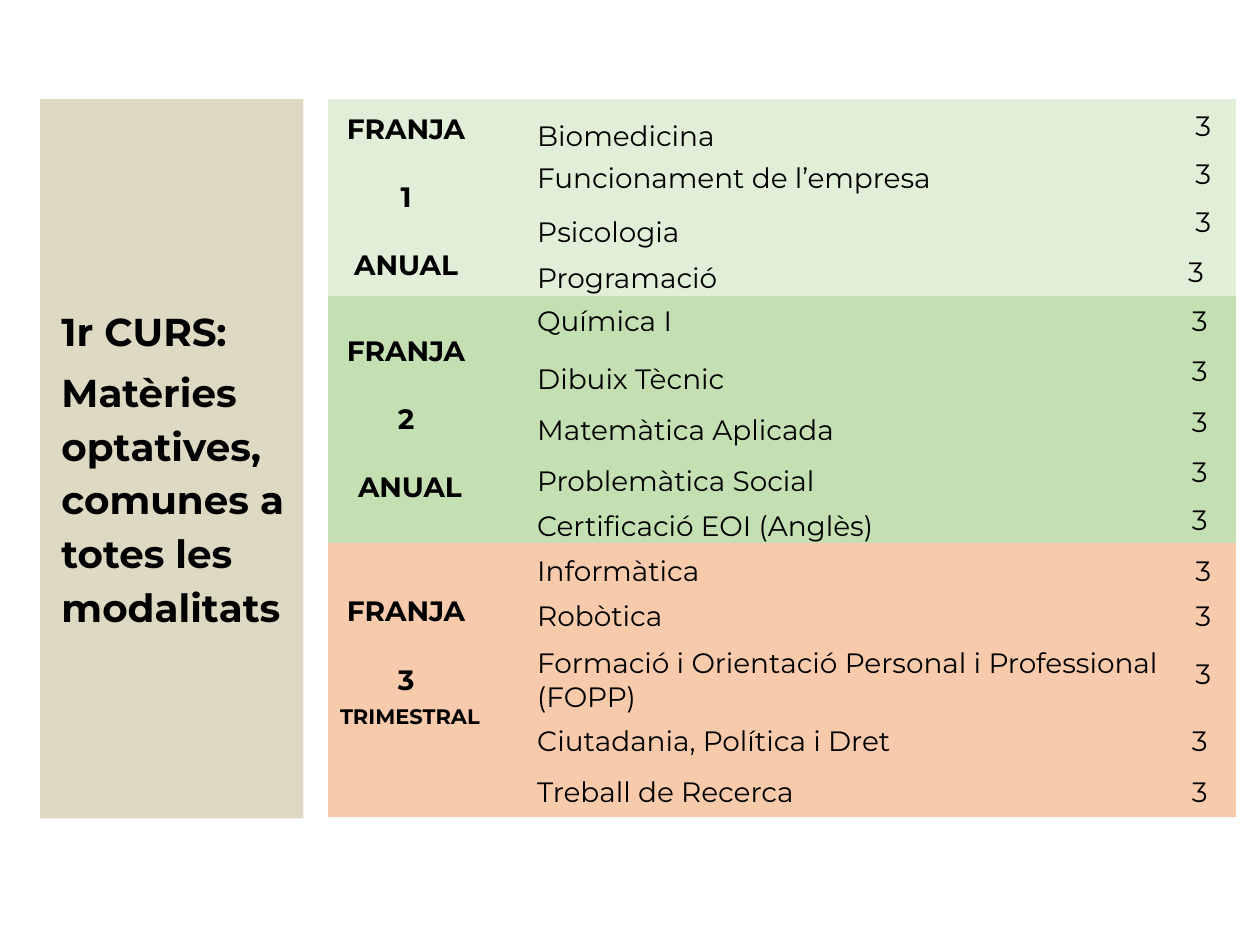
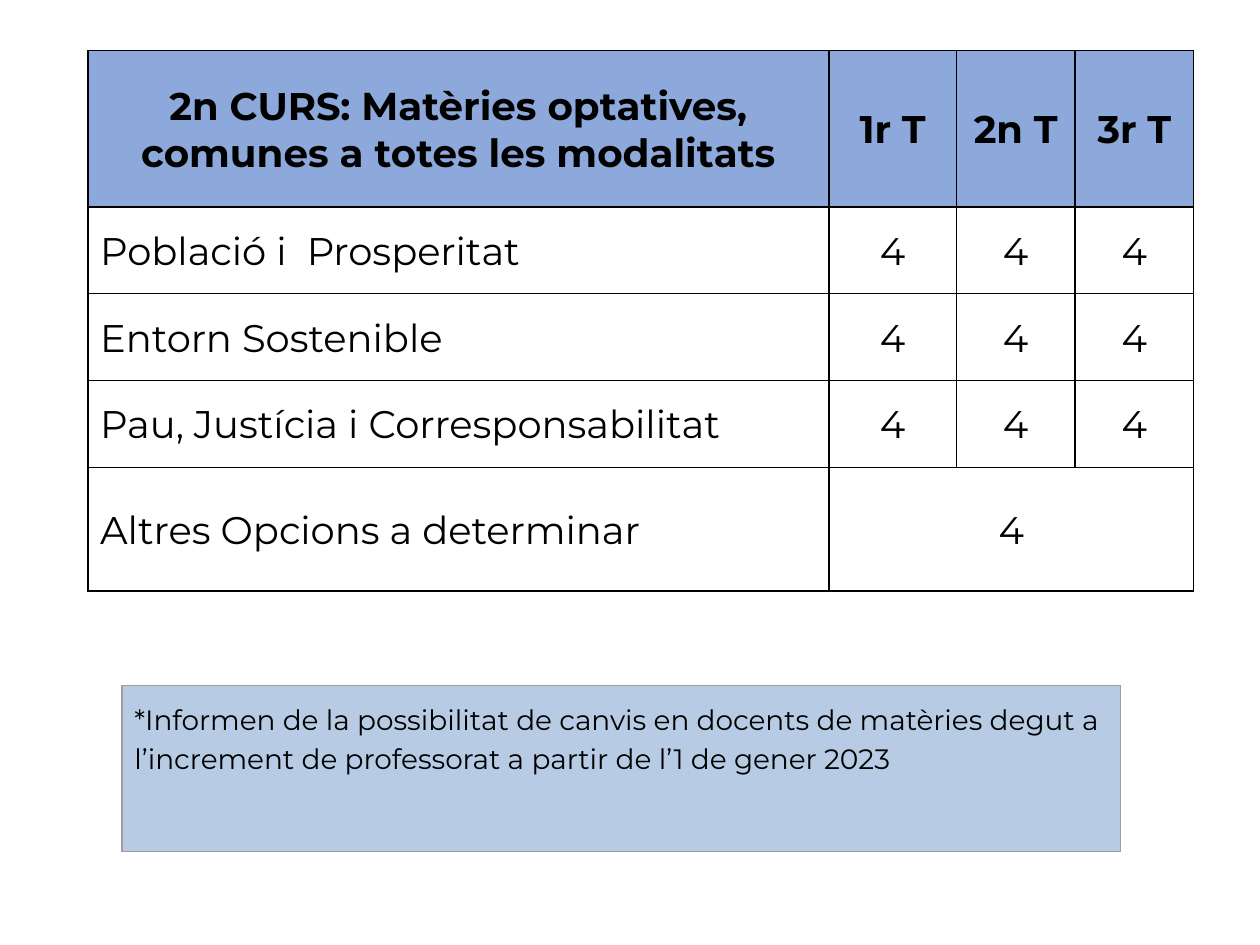
from lxml import etree
from pptx import Presentation
from pptx.dml.color import RGBColor
from pptx.enum.shapes import MSO_SHAPE
from pptx.enum.text import MSO_ANCHOR, PP_ALIGN
from pptx.oxml.ns import qn
from pptx.util import Cm, Pt

RECT = MSO_SHAPE.RECTANGLE
TOP, MID, LOW = MSO_ANCHOR.TOP, MSO_ANCHOR.MIDDLE, MSO_ANCHOR.BOTTOM
LEFT, CENTER = PP_ALIGN.LEFT, PP_ALIGN.CENTER

FONT = "Montserrat"
PLAIN = "{2D5ABB26-0587-4C30-8999-92F81FD0307C}"
BLACK = RGBColor(0x00, 0x00, 0x00)
GRAY = RGBColor(0x9E, 0x9E, 0x9E)
SAND = RGBColor(0xDD, 0xD9, 0xC3)
MINT = RGBColor(0xE1, 0xEF, 0xD8)
GREEN = RGBColor(0xC4, 0xE0, 0xB2)
PEACH = RGBColor(0xF7, 0xCA, 0xAC)
BLUE = RGBColor(0x8D, 0xA9, 0xDB)
PALE = RGBColor(0xB7, 0xCC, 0xE4)

BANDS = [
    (MINT, ["FRANJA", "1", "ANUAL"], [
        (1.09, "Biomedicina", " 3", LOW),
        (0.84, "Funcionament de l’empresa", " 3", LOW),
        (1.09, "Psicologia", " 3", LOW),
        (0.94, "Programació", "3 ", LOW)]),
    (GREEN, ["FRANJA", "2", " ANUAL"], [
        (1.02, "Química I", "3", MID),
        (1.02, "Dibuix Tècnic", "3", LOW),
        (1.02, "Matemàtica Aplicada", "3", LOW),
        (1.02, "Problemàtica Social", "3", LOW),
        (0.91, "Certificació EOI (Anglès)", "3", LOW)]),
    (PEACH, ["FRANJA", "3"], [
        (1.14, "Informàtica", " 3", MID),
        (0.69, "Robòtica", " 3", LOW),
        (1.63, "Formació i Orientació Personal i Professional (FOPP)", " 3", LOW),
        (1.07, "Ciutadania, Política i Dret", "3", MID),
        (0.99, "Treball de Recerca", "3", MID)]),
]
TERMS = ["1r T", "2n T", "3r T"]
THEMES = ["Població i  Prosperitat", "Entorn Sostenible",
          "Pau, Justícia i Corresponsabilitat"]
OTHER = "Altres Opcions a determinar"
NOTE = ("*Informen de la possibilitat de canvis en docents de matèries degut a "
        "l’increment de professorat a partir de l’1 de gener 2023")


def write(para, text, size, bold=False):
    """Add one run to a paragraph."""
    run = para.add_run()
    run.text = text
    font = run.font
    font.name, font.size, font.bold = FONT, Pt(size), bold
    font.color.rgb = BLACK


def pad(item, left, top, right, low):
    """Set the inner margins of a cell or text frame, in cm."""
    item.margin_left, item.margin_top = Cm(left), Cm(top)
    item.margin_right, item.margin_bottom = Cm(right), Cm(low)


def grid(slide, box, cols, rows):
    """Add a plain table whose column and row shares fill the box."""
    x, y, w, h = box
    frame = slide.shapes.add_table(len(rows), len(cols),
                                   Cm(x), Cm(y), Cm(w), Cm(h))
    next(frame._element.iter(qn("a:tableStyleId"))).text = PLAIN
    table = frame.table
    table.first_row = table.horz_banding = False
    for col, part in zip(table.columns, cols):
        col.width = Cm(w * part / sum(cols))
    for row, part in zip(table.rows, rows):
        row.height = Cm(h * part / sum(rows))
    for cell in table.iter_cells():
        pad(cell, 0, 0, 0, 0)
    return table


def edge(cell, color, width):
    """Draw a line on all four sides of a cell."""
    props = cell._tc.get_or_add_tcPr()
    for side in ("lnL", "lnR", "lnT", "lnB"):
        line = etree.SubElement(props, qn("a:" + side), w=str(Pt(width)))
        fill = etree.SubElement(line, qn("a:solidFill"))
        etree.SubElement(fill, qn("a:srgbClr"), val=str(color))


def paint(cell, color, anchor=MID, align=LEFT):
    """Fill and align a cell, and return its first paragraph."""
    cell.fill.solid()
    cell.fill.fore_color.rgb = color
    cell.vertical_anchor = anchor
    para = cell.text_frame.paragraphs[0]
    para.alignment = align
    return para


def panel(slide, box):
    """Draw the side panel that names the first course."""
    shape = slide.shapes.add_shape(RECT, *map(Cm, box))
    shape.shadow.inherit = False
    shape.fill.solid()
    shape.fill.fore_color.rgb = SAND
    shape.line.fill.background()
    frame = shape.text_frame
    frame.word_wrap = True
    frame.vertical_anchor = LOW
    pad(frame, 0.43, 0.1, 0.18, 3.8)
    first, second = frame.paragraphs[0], frame.add_paragraph()
    for para, text in ((first, "1r CURS:"),
                       (second, "Matèries optatives, comunes a totes les modalitats")):
        para.alignment = LEFT
        para.line_spacing = 1.15
        para.space_before = Pt(4.5)
        write(para, text, 22.2, True)


def label(cell, color, lines):
    """Write the spaced heading of a band and return its text frame."""
    para = paint(cell, color, MID, CENTER)
    frame = cell.text_frame
    pad(cell, 0.08, 0, 0.08, 0)
    for i, text in enumerate(lines):
        if i:
            para = frame.add_paragraph()
            para.alignment = CENTER
            para.space_before = Pt(19.5)
        write(para, text, 16, True)
    return frame


def bands(slide, box):
    """Draw the table of subjects in three coloured bands."""
    rows = [1.01] + [item[0] for band in BANDS for item in band[2]]
    table = grid(slide, box, [0.36, 3.15, 13.69, 1.47], rows)
    table.cell(0, 0).merge(table.cell(len(rows) - 2, 0))
    table.cell(0, 1).merge(table.cell(0, 3))
    top = 1
    for color, lines, items in BANDS:
        head = table.cell(top, 1)
        head.merge(table.cell(top + len(items) - 1, 1))
        frame = label(head, color, lines)
        for r, (_, name, hours, anchor) in enumerate(items, top):
            cell = table.cell(r, 2)
            pad(cell, 1.07, 0, 0.08, 0)
            write(paint(cell, color, anchor), name, 16)
            cell = table.cell(r, 3)
            pad(cell, 0.08, 0, 0.08, 0)
            write(paint(cell, color, MID, CENTER), hours, 16)
        top += len(items)
    para = frame.add_paragraph()
    para.alignment = CENTER
    write(para, " ", 16, True)
    write(para, "TRIMESTRAL", 12, True)
    head.margin_bottom = Cm(0.69)


def terms(slide, box):
    """Draw the table of second-course subjects by term."""
    table = grid(slide, box, [14.94, 2.57, 2.39, 2.39],
                 [3.15, 1.75, 1.75, 1.75, 2.49])
    for cell in table.iter_cells():
        pad(cell, 0.25, 0.05, 0.25, 0)
        edge(cell, BLACK, 1)
        cell.fill.background()
        cell.vertical_anchor = MID
    para = paint(table.cell(0, 0), BLUE, MID, CENTER)
    write(para, "2n CURS: ", 22, True)
    write(para, "Matèries optatives, comunes a totes les modalitats", 22.2, True)
    for c, term in enumerate(TERMS, 1):
        write(paint(table.cell(0, c), BLUE, MID, CENTER), term, 22, True)
    last = len(THEMES) + 1
    table.cell(last, 1).merge(table.cell(last, len(TERMS)))
    for r, name in enumerate(THEMES + [OTHER], 1):
        write(table.cell(r, 0).text_frame.paragraphs[0], name, 22)
        for c in range(1, 2 if r == last else len(TERMS) + 1):
            para = table.cell(r, c).text_frame.paragraphs[0]
            para.alignment = CENTER
            write(para, "4", 22)


def note(slide, box):
    """Draw the framed remark below the terms."""
    cell = grid(slide, box, [1], [1]).cell(0, 0)
    pad(cell, 0.25, 0.25, 0.25, 0.25)
    edge(cell, GRAY, 0.75)
    para = paint(cell, PALE, TOP)
    para.line_spacing = 1.15
    write(para, NOTE, 16)


def main():
    """Build both slides and save the deck."""
    deck = Presentation()
    deck.slide_width, deck.slide_height = Cm(25.4), Cm(19.05)
    blank = deck.slide_layouts[6]
    first = deck.slides.add_slide(blank)
    panel(first, (0.81, 2, 5.31, 14.5))
    bands(first, (6.25, 0.99, 18.67, 15.48))
    second = deck.slides.add_slide(blank)
    terms(second, (1.77, 1.02, 22.29, 10.89))
    note(second, (2.46, 13.82, 20.12, 3.35))
    deck.save("out.pptx")


if __name__ == "__main__":
    main()
